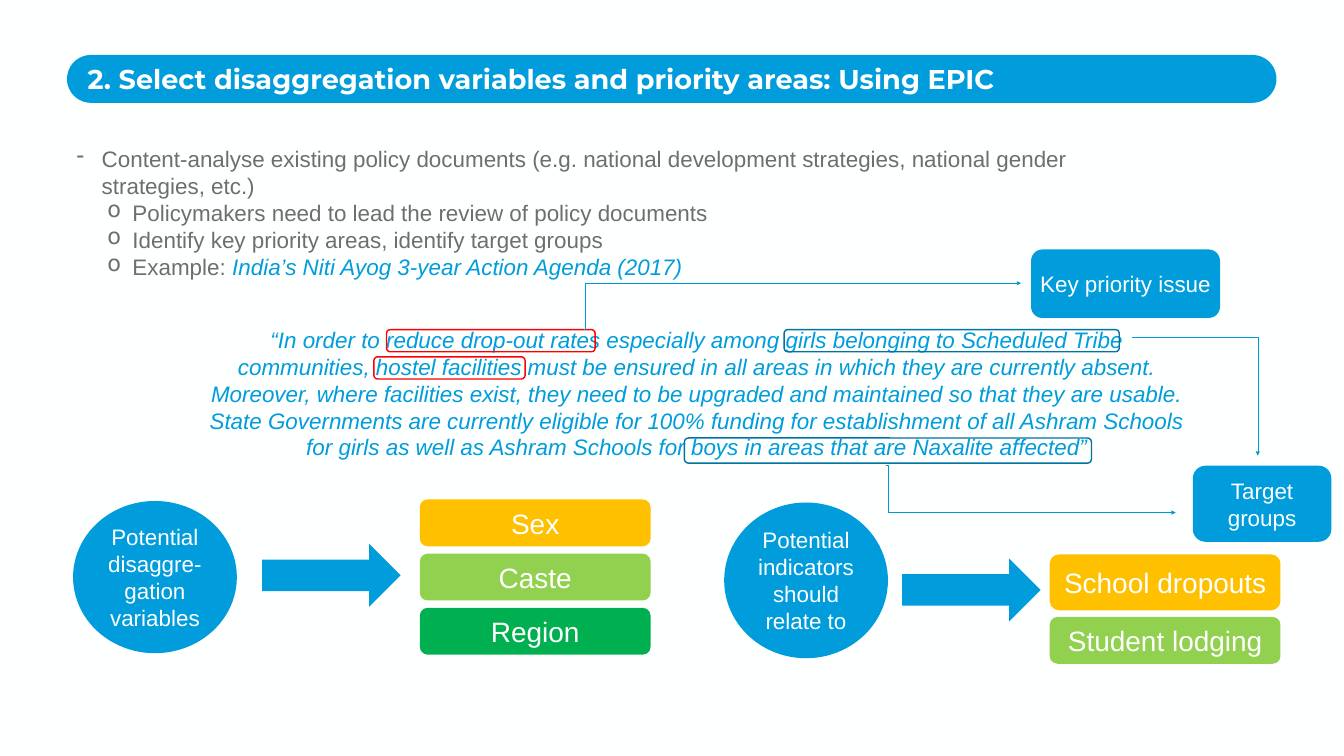
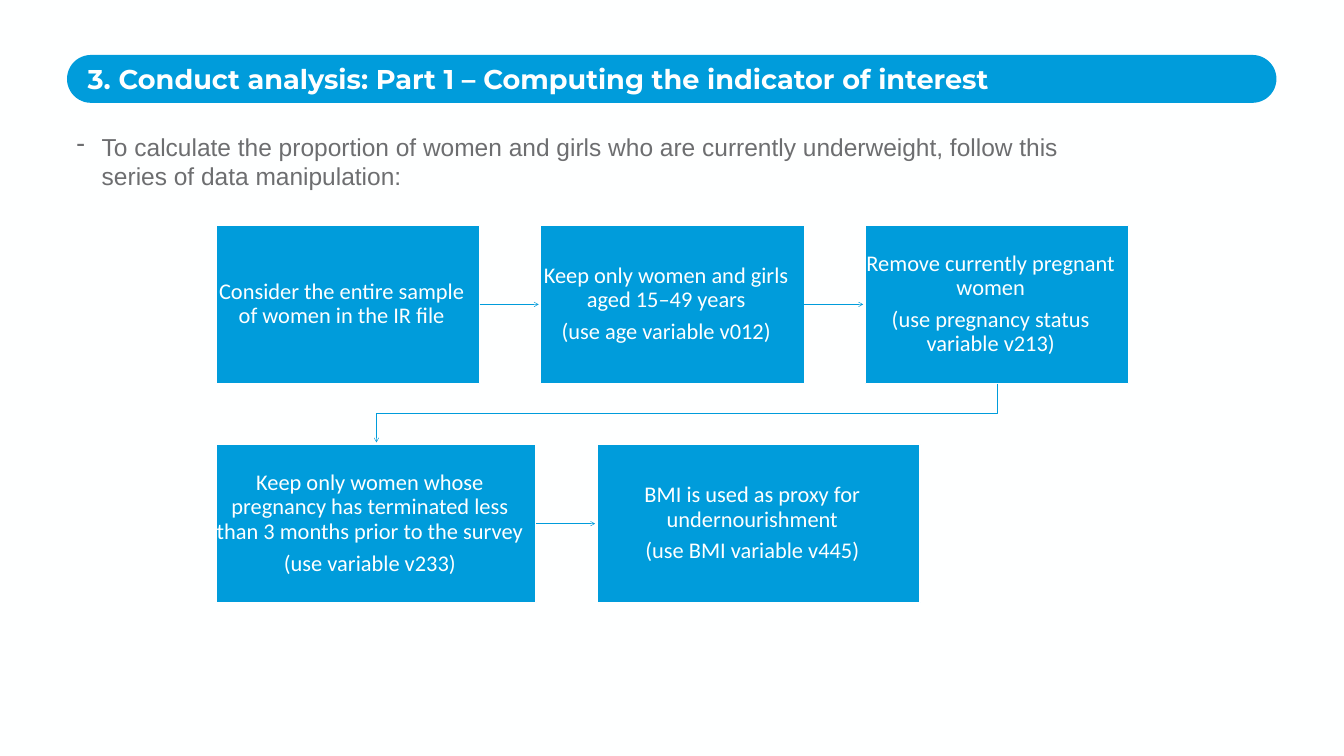
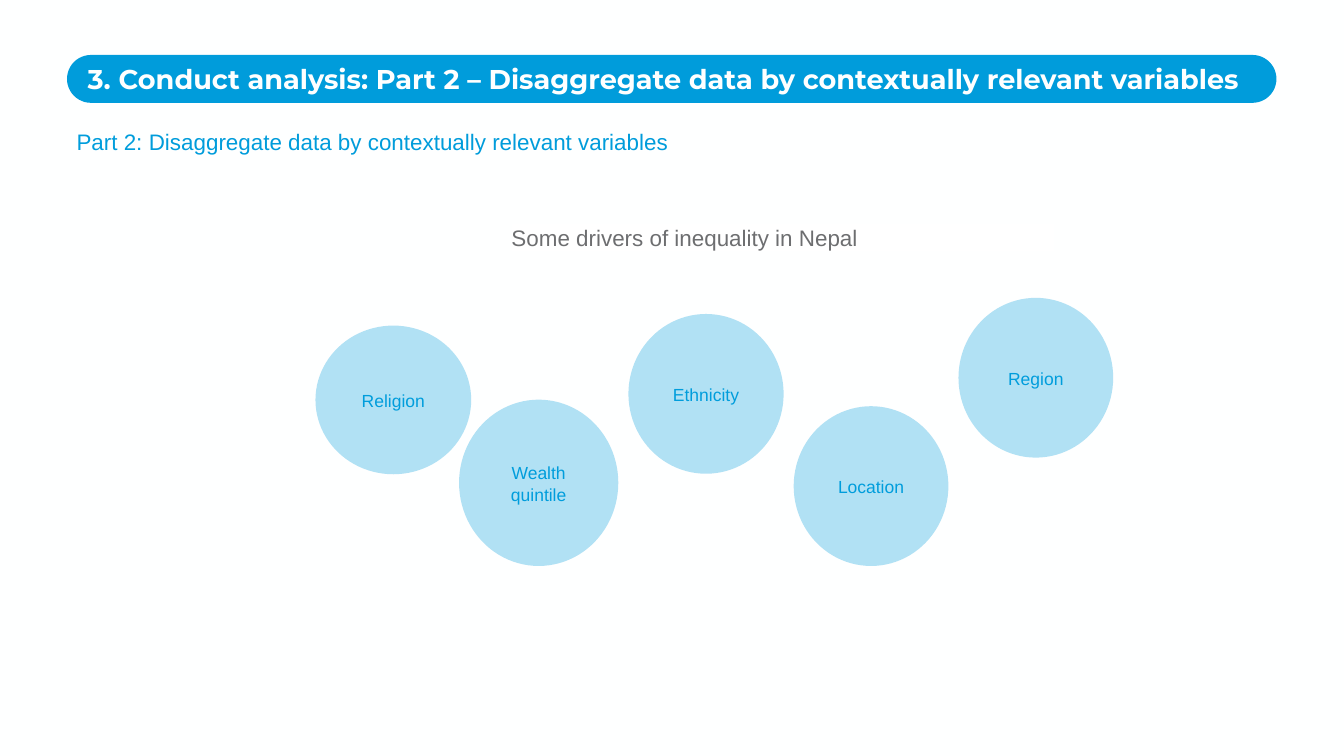
from dataclasses import dataclass

from lxml import etree
from pptx import Presentation
from pptx.dml.color import RGBColor
from pptx.enum.shapes import MSO_CONNECTOR, MSO_SHAPE
from pptx.enum.text import MSO_ANCHOR, MSO_AUTO_SIZE, PP_ALIGN
from pptx.oxml.ns import qn
from pptx.util import Inches, Pt

ROUND, RECT = MSO_SHAPE.ROUNDED_RECTANGLE, MSO_SHAPE.RECTANGLE
OVAL, ARROW = MSO_SHAPE.OVAL, MSO_SHAPE.RIGHT_ARROW
STRAIGHT, ELBOW = MSO_CONNECTOR.STRAIGHT, MSO_CONNECTOR.ELBOW
LEFT, CENTER = PP_ALIGN.LEFT, PP_ALIGN.CENTER
TOP, MIDDLE = MSO_ANCHOR.TOP, MSO_ANCHOR.MIDDLE


@dataclass(frozen=True)
class Theme:
    blue: str = "009CDB"
    bubble: str = "009DDC"
    link: str = "0099D6"
    navy: str = "0073A2"
    red: str = "FF0000"
    amber: str = "FFC000"
    lime: str = "92D050"
    green: str = "00B050"
    grey: str = "6D6E70"
    white: str = "FFFFFF"
    paper: str = "FEFFFF"
    font: str = "Arial"
    title_font: str = "Montserrat"
    flow_font: str = "Calibri"
    title: float = 38.8
    option: float = 40
    lead: float = 35
    body: float = 32
    small: float = 25
    thin: float = 0.75
    thick: float = 2


T = Theme()


def rgb(value):
    return RGBColor.from_string(value)


def inches(*values):
    return [Inches(v) for v in values]


def frame(tf, anchor=TOP, insets=(0.1, 0.05, 0.1, 0.05)):
    tf.word_wrap = True
    tf.auto_size = MSO_AUTO_SIZE.NONE
    tf.vertical_anchor = anchor
    tf.margin_left, tf.margin_top, tf.margin_right, tf.margin_bottom = inches(*insets)
    return tf


def add_text(tf, text, size=T.body, color=T.grey, font=T.font, bold=False, italic=False,
             align=LEFT, line=None, after=0, bullet=None, level=0, indent=0):
    p = tf.paragraphs[-1] if not tf.text else tf.add_paragraph()
    p.alignment, p.level = align, level
    p.space_before, p.space_after = Pt(0), Pt(after)
    if line:
        p.line_spacing = line
    if bullet:
        pPr = p._p.get_or_add_pPr()
        pPr.set("marL", str(Inches(indent)))
        pPr.set("indent", str(Inches(-0.5)))
        etree.SubElement(pPr, qn("a:buChar")).set("char", bullet)
    runs = [(text, {})] if isinstance(text, str) else text
    for words, change in runs:
        r = p.add_run()
        r.text = words
        r.font.name, r.font.size, r.font.bold = font, Pt(size), bold
        r.font.italic = change.get("italic", italic)
        r.font.color.rgb = rgb(change.get("color", color))


def add_box(s, kind, box, fill=None, line=None, alpha=None):
    sp = s.shapes.add_shape(kind, *inches(*box))
    sp.shadow.inherit = False
    if fill:
        sp.fill.solid()
        sp.fill.fore_color.rgb = rgb(fill)
    else:
        sp.fill.background()
    if line:
        sp.line.color.rgb = rgb(line)
        sp.line.width = Pt(T.thick)
    else:
        sp.line.fill.background()
    if alpha:
        color = sp._element.spPr.find(".//" + qn("a:srgbClr"))
        etree.SubElement(color, qn("a:alpha")).set("val", str(alpha * 1000))
    return sp


def add_label(s, kind, box, text, fill, size=T.body):
    sp = add_box(s, kind, box, fill)
    add_text(frame(sp.text_frame, MIDDLE), text, size=size, color=T.paper, align=CENTER)


def add_textbox(s, box, insets=(0.1, 0.05, 0.1, 0.05)):
    tb = s.shapes.add_textbox(*inches(*box))
    frame(tb.text_frame, insets=insets)
    return tb


def style_line(shape, color, head):
    shape.line.color.rgb = rgb(color)
    shape.line.width = Pt(T.thin)
    etree.SubElement(shape.line._get_or_add_ln(), qn("a:tailEnd")).set("type", head)


def add_link(s, kind, start, end, color, head, bend=None):
    c = s.shapes.add_connector(kind, *inches(*start, *end))
    style_line(c, color, head)
    spPr = c._element.spPr
    etree.SubElement(spPr, qn("a:effectLst"))
    if bend is not None:
        guides = spPr.find(qn("a:prstGeom")).get_or_add_avLst()
        guide = etree.SubElement(guides, qn("a:gd"))
        guide.set("name", "adj1")
        guide.set("fmla", f"val {round(bend * 100000)}")


def add_route(s, points, color, head):
    start, *rest = [inches(*point) for point in points]
    builder = s.shapes.build_freeform(*start)
    builder.add_line_segments(rest, close=False)
    route = builder.convert_to_shape()
    route.shadow.inherit = False
    route.fill.background()
    style_line(route, color, head)


def new_slide(prs, title):
    s = prs.slides.add_slide(prs.slide_layouts[5])
    ph = s.shapes.title
    ph.left, ph.top, ph.width, ph.height = inches(1.74, 1.23, 23.22, 0.65)
    add_text(frame(ph.text_frame, insets=(0, 0, 0, 0)), title, size=T.title,
             color=T.paper, font=T.title_font, bold=True)
    band = add_box(s, ROUND, (1.33, 1.09, 24, 0.95), T.blue)
    band.adjustments[0] = 0.5
    s.shapes._spTree.insert(2, band._element)
    return s


def policy_bullets(s, box):
    tf = add_textbox(s, box).text_frame
    add_text(tf, "Content-analyse existing policy documents (e.g. national development "
             "strategies, national gender strategies, etc.)", bullet="-", indent=0.5)
    example = [("Example: ", {}),
               ("India’s Niti Ayog 3-year Action Agenda (2017)", {"color": T.blue, "italic": True})]
    for text in ("Policymakers need to lead the review of policy documents",
                 "Identify key priority areas, identify target groups", example):
        add_text(tf, text, bullet="o", level=1, indent=1.11)


def marked_quote(s, box):
    x, y = box[:2]
    add_text(add_textbox(s, box).text_frame,
             "“In order to reduce drop-out rates especially among girls belonging to Scheduled "
             "Tribe communities, hostel facilities must be ensured in all areas in which they are "
             "currently absent. Moreover, where facilities exist, they need to be upgraded and "
             "maintained so that they are usable. State Governments are currently eligible for "
             "100% funding for establishment of all Ashram Schools for girls as well as Ashram "
             "Schools for boys in areas that are Naxalite affected”",
             color=T.blue, italic=True, align=CENTER)
    marks = [(11.56, 0.12, 6.65, 0.44, T.navy), (9.58, 2.27, 8.08, 0.5, T.navy),
             (3.67, 0.12, 4.14, 0.44, T.red), (3.42, 0.66, 3, 0.44, T.red)]
    for dx, dy, w, h, color in marks:
        add_box(s, ROUND, (x + dx, y + dy, w, h), line=color)


def callouts(s, box):
    x, y = box
    links = [((0, 1.59), (8.68, 0.67), 0.004), ((10.88, 1.74), (13.38, 4.09), 1),
             ((6, 4.29), (11.75, 5.22), 0.007)]
    for (x1, y1), (x2, y2), bend in links:
        add_link(s, ELBOW, (x + x1, y + y1), (x + x2, y + y2), T.link, "triangle", bend)
    add_label(s, ROUND, (x + 8.88, y, 3.75, 1.36), "Key priority issue", T.blue)
    add_label(s, ROUND, (x + 12.09, y + 4.29, 2.75, 1.51), "Target groups", T.blue)


def derivation(s, box, topic, arrow, first, gap, options):
    x, y = box[:2]
    add_label(s, OVAL, box, topic, T.blue)
    add_box(s, ARROW, (x + arrow[0], y + arrow[1], 2.75, 1.25), T.blue)
    top = y + first[1]
    for text, fill, height in options:
        add_label(s, ROUND, (x + first[0], top, 4.58, height), text, fill, T.option)
        top += height + gap


def flow_row(s, box, widths, steps):
    x, y, height, gap = box
    for i, (width, step) in enumerate(zip(widths, steps)):
        sp = add_box(s, RECT, (x, y, width, height), T.blue, T.paper)
        tf = frame(sp.text_frame, MIDDLE, (0, 0.25, 0.25, 0.25))
        for text in step:
            add_text(tf, text, color=T.paper, font=T.flow_font, align=CENTER, line=0.9, after=11)
        x += width
        if i < len(steps) - 1:
            middle = y + height / 2
            add_link(s, STRAIGHT, (x, middle), (x + gap - 0.04, middle), T.blue, "arrow")
        x += gap


def drivers(s, box):
    x, y, width, height = box
    bubbles = [("Location", 5.6, 3.62, 3.07, 3.17), ("Ethnicity", 2.32, 1.79, 3.08, 3.17),
               ("Wealth quintile", -1.04, 3.49, 3.16, 3.3), ("Religion", -3.89, 2.02, 3.09, 2.95),
               ("Region", 8.87, 1.47, 3.07, 3.17)]
    for text, dx, dy, w, h in bubbles:
        sp = add_box(s, OVAL, (x + dx, y + dy, w, h), T.bubble, alpha=30)
        add_text(frame(sp.text_frame, MIDDLE), text, size=T.small, color=T.bubble,
                 align=CENTER, line=1.07, after=8)
    heading = add_textbox(s, (x, y, width, height), insets=(0, 0, 0, 0))
    heading.fill.solid()
    heading.fill.fore_color.rgb = rgb(T.white)
    add_text(heading.text_frame, "Some drivers of inequality in Nepal", after=10)


def variables_slide(prs):
    s = new_slide(prs, "2. Select disaggregation variables and priority areas: Using EPIC")
    policy_bullets(s, (1.42, 2.83, 20.01, 3.87))
    marked_quote(s, (4, 6.42, 19.67, 3.33))
    callouts(s, (11.58, 4.95))
    derivation(s, (1.45, 9.94, 3.25, 3.02), "Potential disaggre-gation variables",
               (3.75, 0.85), (6.88, -0.03), 0.145,
               [("Sex", T.amber, 0.93), ("Caste", T.lime, 0.93), ("Region", T.green, 0.93)])
    derivation(s, (14.37, 9.97, 3.25, 3.09), "Potential indicators should relate to",
               (3.53, 1.11), (6.46, 1.03), 0.13,
               [("School dropouts", T.amber, 1.11), ("Student lodging", T.lime, 0.93)])


def indicator_slide(prs):
    s = new_slide(prs, "3. Conduct analysis: Part 1 – Computing the indicator of interest")
    add_text(add_textbox(s, (1.42, 2.57, 20.01, 1.28)).text_frame,
             "To calculate the proportion of women and girls who are currently underweight, "
             "follow this series of data manipulation:", size=T.lead, bullet="-", indent=0.5)
    flow_row(s, (4.29, 4.47, 3.14, 1.21), [5.23] * 3, [
        ["Consider the entire sample of women in the IR file"],
        ["Keep only women and girls aged 15–49 years", "(use age variable v012)"],
        ["Remove currently pregnant women", "(use pregnancy status variable v213)"]])
    add_route(s, [(19.78, 7.61), (19.78, 8.21), (7.47, 8.21), (7.47, 8.78)], T.blue, "arrow")
    flow_row(s, (4.29, 8.82, 3.14, 1.21), [6.35, 6.41], [
        ["Keep only women whose pregnancy has terminated less than 3 months prior to the survey",
         "(use variable v233)"],
        ["BMI is used as proxy for undernourishment", "(use BMI variable v445)"]])


def disaggregation_slide(prs):
    subject = "Disaggregate data by contextually relevant variables"
    s = new_slide(prs, f"3. Conduct analysis: Part 2 – {subject}")
    add_text(add_textbox(s, (1.42, 2.5, 20.01, 0.64)).text_frame,
             [("Part 2: ", {"color": T.bubble}), (subject, {})], color=T.blue)
    drivers(s, (10.15, 4.44, 10.78, 0.54))


def main():
    prs = Presentation()
    prs.slide_width, prs.slide_height = inches(26.67, 15)
    background = prs.slide_master.background.fill
    background.solid()
    background.fore_color.rgb = rgb(T.paper)
    variables_slide(prs)
    indicator_slide(prs)
    disaggregation_slide(prs)
    prs.save("out.pptx")


if __name__ == "__main__":
    main()
